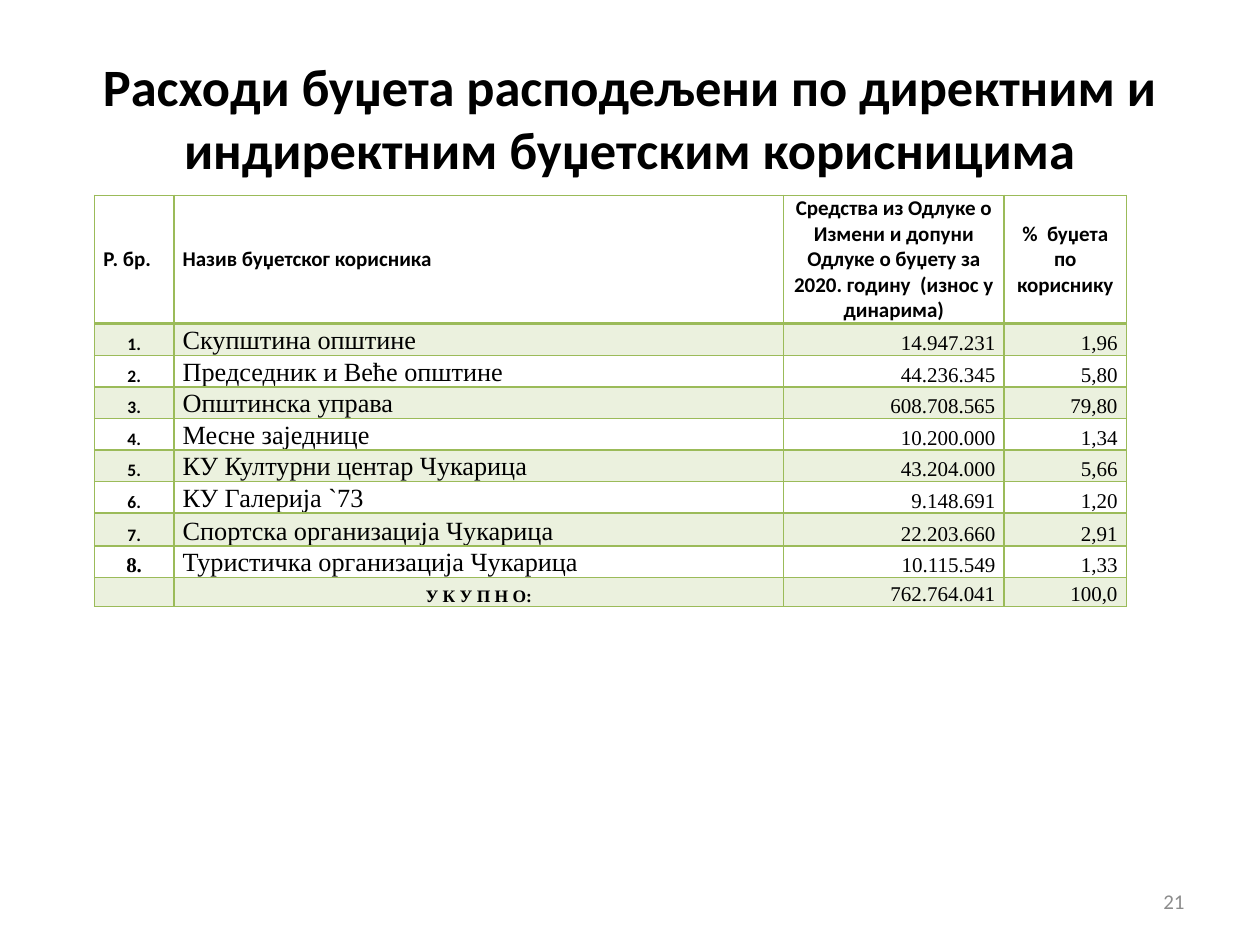
import pptx
import pptx.util
import pptx.dml.color
import pptx.enum.text
import pptx.oxml.ns
import lxml.etree
from dataclasses import dataclass

Inches = pptx.util.Inches
Pt = pptx.util.Pt
qn = pptx.oxml.ns.qn
ALIGN = pptx.enum.text.PP_ALIGN
ANCHOR = pptx.enum.text.MSO_ANCHOR


@dataclass(frozen=True)
class Theme:
    sans: str = "Calibri"
    serif: str = "Times New Roman"
    ink: str = "000000"
    muted: str = "8C8C8C"
    line: str = "9BBB59"
    band: str = "EBF1DE"
    title: int = 30
    name: int = 15
    body: int = 12
    small: int = 10


THEME = Theme()
HEADERS = [
    ("Р. бр.", ALIGN.LEFT),
    ("Назив буџетског корисника", ALIGN.LEFT),
    ("Средства из Одлуке о Измени и допуни Одлуке о буџету за 2020. годину  (износ у динарима)", ALIGN.CENTER),
    ("%  буџета по кориснику", ALIGN.CENTER),
]
USERS = [
    ("Скупштина општине", "14.947.231", "1,96"),
    ("Председник и Веће општине", "44.236.345", "5,80"),
    ("Општинска управа", "608.708.565", "79,80"),
    ("Месне заједнице", "10.200.000", "1,34"),
    ("КУ Културни центар Чукарица", "43.204.000", "5,66"),
    ("КУ Галерија `73", "9.148.691", "1,20"),
    ("Спортска организација Чукарица", "22.203.660", "2,91"),
    ("Туристичка организација Чукарица", "10.115.549", "1,33"),
]
TOTAL = ("", "У К У П Н О:", "762.764.041", "100,0")
COL_WIDTHS = [0.63, 4.84, 1.75, 0.97]
ROW_HEIGHTS = [1.02, 0.23, 0.25, 0.23, 0.23, 0.23, 0.23, 0.26, 0.23, 0.23]


class Deck:
    def __init__(self, prs, theme):
        self.theme = theme
        self.slide = prs.slides.add_slide(prs.slide_layouts[6])

    def paragraph(self, tf, text, align, size, name, bold=False, color=None):
        p = tf.paragraphs[0]
        p.alignment = align
        if not text:
            lxml.etree.SubElement(p._p, qn("a:endParaRPr"), sz=str(size * 100))
            return
        r = p.add_run()
        r.text = text
        for key, value in {"size": Pt(size), "name": name, "bold": bold}.items():
            setattr(r.font, key, value)
        r.font.color.rgb = pptx.dml.color.RGBColor.from_string(color or self.theme.ink)

    def text(self, box, text, **style):
        tf = self.slide.shapes.add_textbox(*map(Inches, box)).text_frame
        tf.word_wrap = True
        tf.vertical_anchor = ANCHOR.MIDDLE
        self.paragraph(tf, text, **style)

    def borders(self, cell, widths):
        tc_pr = cell._tc.get_or_add_tcPr()
        for side, width in widths.items():
            ln = lxml.etree.SubElement(tc_pr, qn(f"a:ln{side}"), w=str(int(Pt(width))))
            fill = lxml.etree.SubElement(ln, qn("a:solidFill"))
            lxml.etree.SubElement(fill, qn("a:srgbClr"), val=self.theme.line)

    def cell(self, cell, row, text, **style):
        margins = {"margin_left": Inches(0.07), "margin_right": Inches(0.07),
                   "margin_top": 0, "margin_bottom": 0}
        anchor = ANCHOR.BOTTOM if row else ANCHOR.MIDDLE
        for key, value in {**margins, "vertical_anchor": anchor}.items():
            setattr(cell, key, value)
        self.borders(cell, {"L": 1, "R": 1, "T": 2 if row == 1 else 1, "B": 1 if row else 2})
        if row % 2:
            cell.fill.solid()
            cell.fill.fore_color.rgb = pptx.dml.color.RGBColor.from_string(self.theme.band)
        else:
            cell.fill.background()
        self.paragraph(cell.text_frame, text, **style)

    def table(self, left, top, widths, heights, rows):
        box = map(Inches, (left, top, sum(widths), sum(heights)))
        table = self.slide.shapes.add_table(len(heights), len(widths), *box).table
        for column, width in zip(table.columns, widths):
            column.width = Inches(width)
        for row, height in zip(table.rows, heights):
            row.height = Inches(height)
        for i, row in enumerate(rows):
            for j, (text, style) in enumerate(row):
                self.cell(table.cell(i, j), i, text, **style)


def budget_rows(theme):
    number = {"align": ALIGN.CENTER, "size": theme.small, "name": theme.sans, "bold": True}
    last_number = {**number, "size": theme.body, "name": theme.serif}
    name = {"align": ALIGN.LEFT, "size": theme.name, "name": theme.serif}
    amount = {"align": ALIGN.RIGHT, "size": theme.body, "name": theme.serif}
    total = {**number, "name": theme.serif}

    rows = [[(text, {"align": align, "size": theme.body, "name": theme.sans, "bold": True})
             for text, align in HEADERS]]
    for i, user in enumerate(USERS, 1):
        first = last_number if i == len(USERS) else number
        rows.append(list(zip((f"{i}.", *user), (first, name, amount, amount))))
    rows.append(list(zip(TOTAL, (number, total, amount, amount))))
    return rows


def main():
    prs = pptx.Presentation()
    prs.slide_width, prs.slide_height = Inches(10), Inches(7.5)
    deck = Deck(prs, THEME)
    deck.text((0.5, 0.3, 9, 1.25),
              "Расходи буџета расподељени по директним и индиректним буџетским корисницима",
              align=ALIGN.CENTER, size=THEME.title, name=THEME.sans, bold=True)
    deck.table(0.75, 1.55, COL_WIDTHS, ROW_HEIGHTS, budget_rows(THEME))
    deck.text((7.17, 6.95, 2.33, 0.4), "21",
              align=ALIGN.RIGHT, size=THEME.body, name=THEME.sans, color=THEME.muted)
    prs.save("out.pptx")


if __name__ == "__main__":
    main()
